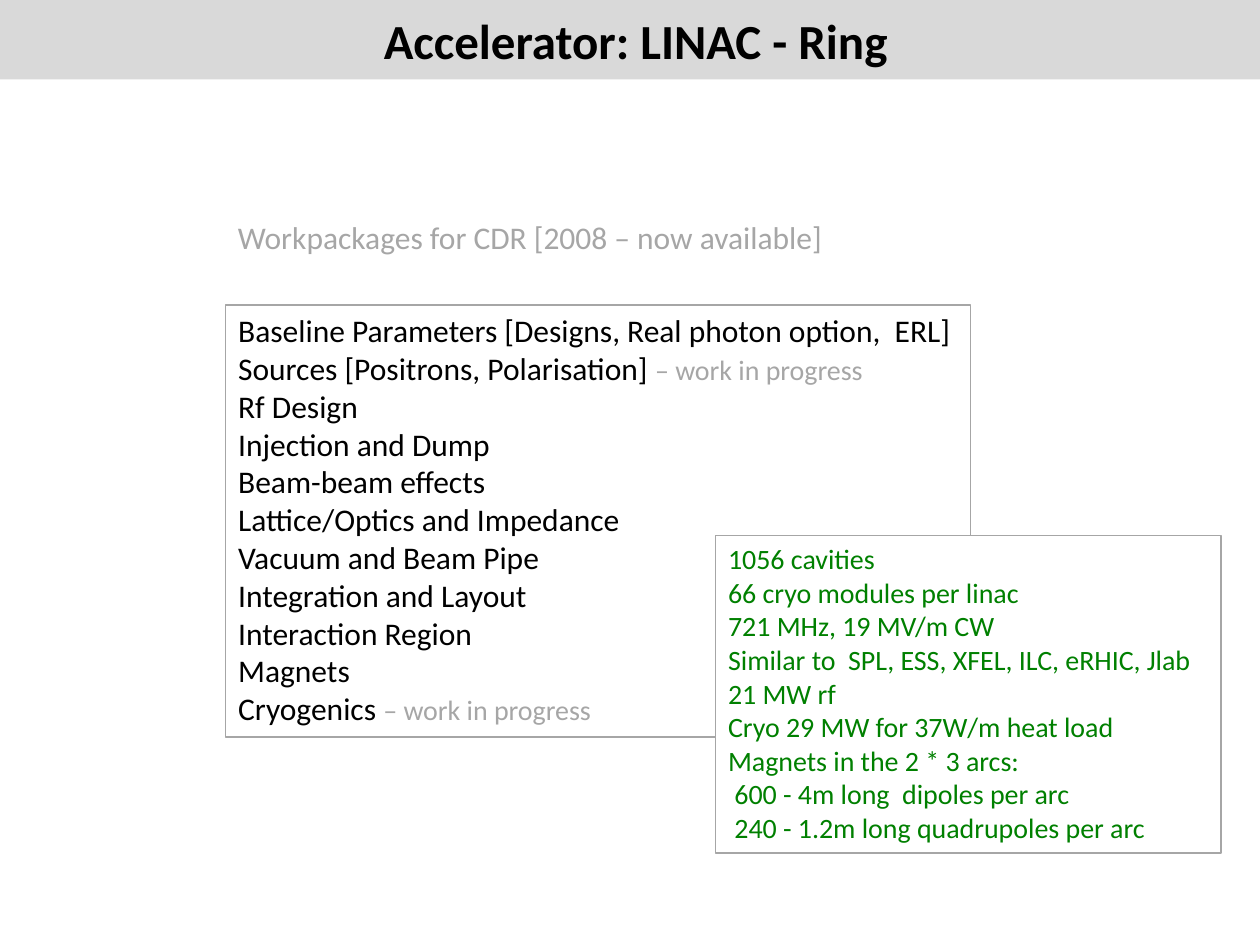
"""Build the LINAC - Ring accelerator slide."""
from dataclasses import dataclass

from pptx import Presentation
from pptx.dml.color import RGBColor
from pptx.enum import shapes, text
from pptx.util import Inches, Pt

FONT = "Calibri"
BLACK, GREY, GREEN = "000000", "A6A6A6", "008000"


@dataclass
class Line:
    """One line of text, with an optional grey note or indent."""
    words: str
    note: str = ""
    indent: float = 0


@dataclass
class Box:
    """Place and text style of one block."""
    left: float
    top: float
    width: float
    height: float
    size: int
    color: str


TITLE = Box(0, 0, 10, 0.63, 28, BLACK)
HEAD = Box(1.79, 1.68, 4.89, 0.4, 18, GREY)
TASKS = Box(1.79, 2.42, 5.91, 3.43, 18, BLACK)
FACTS = Box(5.68, 4.25, 4.01, 2.52, 16, GREEN)

NOTE = "– work in progress"
WORK = [
    Line("Baseline Parameters [Designs, Real photon option,  ERL]"),
    Line("Sources [Positrons, Polarisation] ", NOTE),
    Line("Rf Design"),
    Line("Injection and Dump"),
    Line("Beam-beam effects"),
    Line("Lattice/Optics and Impedance"),
    Line("Vacuum and Beam Pipe"),
    Line("Integration and Layout"),
    Line("Interaction Region"),
    Line("Magnets"),
    Line("Cryogenics ", NOTE),
]
DATA = [
    Line("1056 cavities"),
    Line("66 cryo modules per linac"),
    Line("721 MHz, 19 MV/m CW"),
    Line("Similar to  SPL, ESS, XFEL, ILC, eRHIC, Jlab"),
    Line("21 MW rf"),
    Line("Cryo 29 MW for 37W/m heat load"),
    Line("Magnets in the 2 * 3 arcs:"),
    Line("600 - 4m long  dipoles per arc", indent=0.05),
    Line("240 - 1.2m long quadrupoles per arc", indent=0.05),
]


def paint(part, color: str) -> None:
    """Give a fill or a font a solid colour."""
    if hasattr(part, "solid"):
        part.solid()
        part.fore_color.rgb = RGBColor.from_string(color)
    else:
        part.color.rgb = RGBColor.from_string(color)


def style(font, size: int, color: str, bold: bool = False) -> None:
    """Set face, size, weight and colour of a font."""
    font.name, font.size, font.bold = FONT, Pt(size), bold
    paint(font, color)


def place(shape, box: Box) -> None:
    """Move a shape to its box."""
    shape.left, shape.top = Inches(box.left), Inches(box.top)
    shape.width, shape.height = Inches(box.width), Inches(box.height)


def edge(shape) -> None:
    """Draw a thin grey outline."""
    paint(shape.line.fill, GREY)
    shape.line.width = Pt(0.75)


def write(shape, lines: list[Line], box: Box) -> None:
    """Fill a shape with plain left-aligned lines."""
    frame = shape.text_frame
    frame.word_wrap = True
    frame.auto_size = text.MSO_AUTO_SIZE.NONE
    frame.vertical_anchor = text.MSO_ANCHOR.TOP
    for num, line in enumerate(lines):
        para = frame.add_paragraph() if num else frame.paragraphs[0]
        para.alignment = text.PP_ALIGN.LEFT
        para.space_before = Pt(0)
        props = para._p.get_or_add_pPr()
        props.set("marL", str(Inches(line.indent)))
        props.set("indent", "0")
        props.append(props.makeelement(
            "{http://schemas.openxmlformats.org/drawingml/2006/main}buNone", {}))
        main = para.add_run()
        main.text = line.words
        if line.note:
            style(main.font, box.size, box.color)
            note = para.add_run()
            note.text = line.note
            style(note.font, 16, GREY)
        else:
            style(para.font, box.size, box.color)


def main() -> None:
    """Build and save the slide."""
    deck = Presentation()
    deck.slide_width, deck.slide_height = Inches(10), Inches(7.5)
    slide = deck.slides.add_slide(deck.slide_layouts[1])

    title, tasks = slide.placeholders
    place(title, TITLE)
    paint(title.fill, "D9D9D9")
    frame = title.text_frame
    frame.text = "Accelerator: LINAC - Ring"
    frame.auto_size = text.MSO_AUTO_SIZE.NONE
    frame.vertical_anchor = text.MSO_ANCHOR.MIDDLE
    frame.margin_left = Inches(0.19)
    frame.paragraphs[0].alignment = text.PP_ALIGN.CENTER
    style(frame.paragraphs[0].font, TITLE.size, TITLE.color, True)

    place(tasks, TASKS)
    edge(tasks)
    write(tasks, WORK, TASKS)

    head = slide.shapes.add_textbox(0, 0, 0, 0)
    place(head, HEAD)
    write(head, [Line("Workpackages for CDR [2008 – now available]")], HEAD)

    facts = slide.shapes.add_shape(shapes.MSO_SHAPE.RECTANGLE, 0, 0, 0, 0)
    facts.shadow.inherit = False
    place(facts, FACTS)
    paint(facts.fill, "FFFFFF")
    edge(facts)
    write(facts, DATA, FACTS)

    deck.save("out.pptx")


if __name__ == "__main__":
    main()
